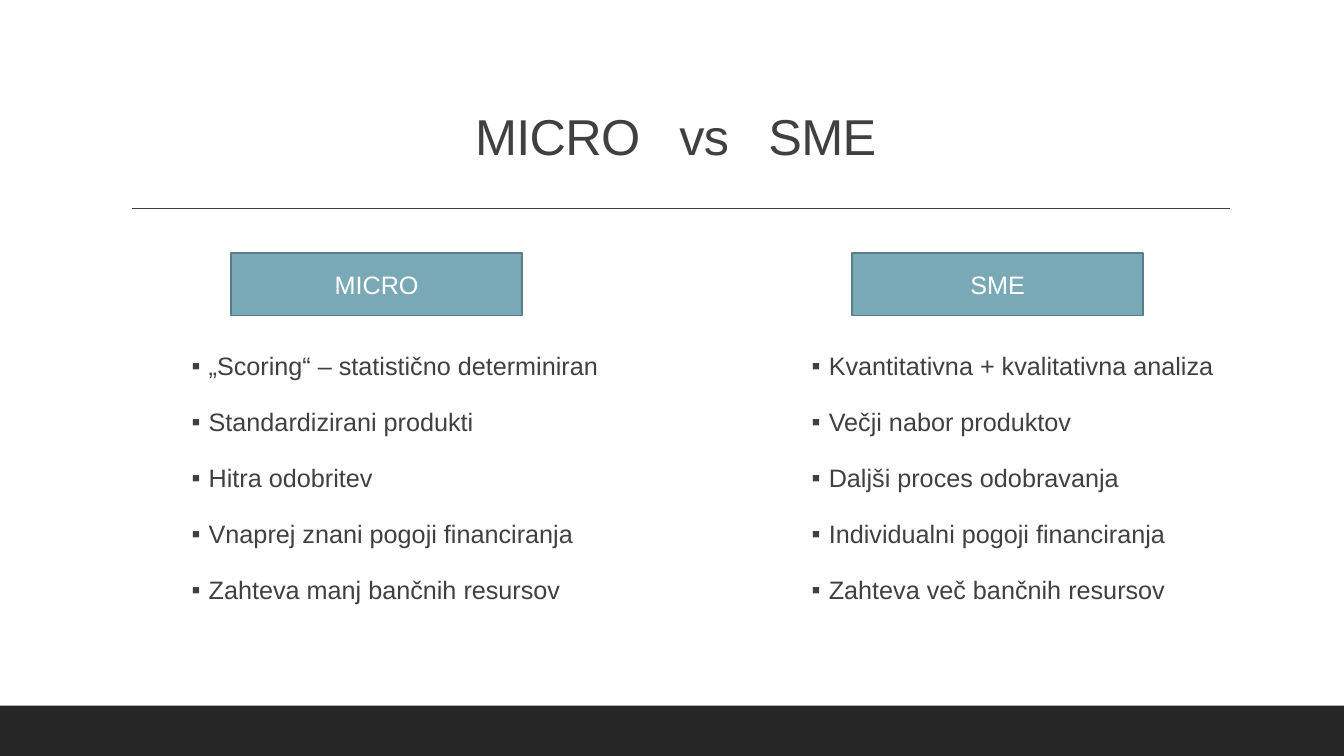
"""Builds a slide that compares micro and SME financing."""
import pptx
import pptx.dml.color
import pptx.enum.shapes
import pptx.enum.text
import pptx.util
from lxml import etree
from pptx.util import Inches, Pt

TITLE = "MICRO   vs   SME"
SEGMENTS = [
    {"name": "MICRO", "label_left": 2.29, "list_left": 1.9, "list_width": 4.76,
     "traits": ["„Scoring“ – statistično determiniran",
                "Standardizirani produkti",
                "Hitra odobritev",
                "Vnaprej znani pogoji financiranja",
                "Zahteva manj bančnih resursov"]},
    {"name": "SME", "label_left": 8.45, "list_left": 8.05, "list_width": 4.15,
     "traits": ["Kvantitativna + kvalitativna analiza",
                "Večji nabor produktov",
                "Daljši proces odobravanja",
                "Individualni pogoji financiranja",
                "Zahteva več bančnih resursov"]},
]
WIDTH, HEIGHT = 13.33, 7.5
FOOTER_HEIGHT = 0.5
RULE_LEFT, RULE_RIGHT, RULE_TOP = 1.31, 12.2, 2.07
LABEL_TOP, LABEL_WIDTH, LABEL_HEIGHT = 2.51, 2.89, 0.62
LIST_TOP, LIST_HEIGHT = 3.37, 3.05
BULLET_INDENT = 0.17
DARK, FOOTER, TEAL, TEAL_EDGE, WHITE = "404040", "262626", "79A9B7", "5A7D87", "FFFFFF"


def rgb(value):
    return pptx.dml.color.RGBColor.from_string(value)


def style(paragraph, size, color):
    paragraph.font.name = "Arial"
    paragraph.font.size = Pt(size)
    paragraph.font.color.rgb = rgb(color)


def add_box(slide, left, top, width, height, fill):
    box = slide.shapes.add_shape(
        pptx.enum.shapes.MSO_SHAPE.RECTANGLE,
        Inches(left), Inches(top), Inches(width), Inches(height))
    box.shadow.inherit = False
    box.fill.solid()
    box.fill.fore_color.rgb = rgb(fill)
    box.line.fill.background()
    return box


def add_rule(slide):
    rule = slide.shapes.add_connector(
        pptx.enum.shapes.MSO_CONNECTOR.STRAIGHT,
        Inches(RULE_LEFT), Inches(RULE_TOP), Inches(RULE_RIGHT), Inches(RULE_TOP))
    rule.line.color.rgb = rgb(DARK)
    rule.line.width = Pt(1)
    etree.SubElement(rule._element.spPr, pptx.oxml.ns.qn("a:effectLst"))


def set_title(slide):
    title = slide.shapes.title
    title.left, title.top = Inches(1.2), Inches(0.31)
    title.width, title.height = Inches(11), Inches(1.39)
    title.text_frame.text = TITLE
    title.text_frame.vertical_anchor = pptx.enum.text.MSO_ANCHOR.BOTTOM
    heading = title.text_frame.paragraphs[0]
    heading.alignment = pptx.enum.text.PP_ALIGN.CENTER
    heading.line_spacing = 0.9
    style(heading, 36, DARK)
    heading.runs[0]._r.get_or_add_rPr().set("spc", "-50")


def add_label(slide, segment):
    label = add_box(slide, segment["label_left"], LABEL_TOP, LABEL_WIDTH, LABEL_HEIGHT, TEAL)
    label.line.color.rgb = rgb(TEAL_EDGE)
    label.line.width = Pt(1.25)
    label.text_frame.text = segment["name"]
    label.text_frame.vertical_anchor = pptx.enum.text.MSO_ANCHOR.MIDDLE
    caption = label.text_frame.paragraphs[0]
    caption.alignment = pptx.enum.text.PP_ALIGN.CENTER
    style(caption, 18, WHITE)


def add_traits(slide, segment):
    frame = slide.shapes.add_textbox(
        Inches(segment["list_left"]), Inches(LIST_TOP),
        Inches(segment["list_width"]), Inches(LIST_HEIGHT)).text_frame
    frame.word_wrap = True
    frame.margin_left = frame.margin_right = 0
    frame.text = "\n".join(segment["traits"])
    for trait in frame.paragraphs:
        style(trait, 18, DARK)
        trait.line_spacing = 1.2
        trait.space_before, trait.space_after = Pt(12), Pt(2)
        properties = trait._p.get_or_add_pPr()
        properties.set("marL", str(Inches(BULLET_INDENT)))
        properties.set("indent", str(-Inches(BULLET_INDENT)))
        bullet_font = etree.Element(pptx.oxml.ns.qn("a:buFont"), typeface="Arial")
        bullet = etree.Element(pptx.oxml.ns.qn("a:buChar"), char="▪")
        defaults = properties.find(pptx.oxml.ns.qn("a:defRPr"))
        defaults.addprevious(bullet_font)
        defaults.addprevious(bullet)


def main():
    deck = pptx.Presentation()
    deck.slide_width, deck.slide_height = Inches(WIDTH), Inches(HEIGHT)
    slide = deck.slides.add_slide(deck.slide_layouts[5])
    add_box(slide, 0, HEIGHT - FOOTER_HEIGHT, WIDTH, FOOTER_HEIGHT, FOOTER)
    add_rule(slide)
    set_title(slide)
    for segment in SEGMENTS:
        add_traits(slide, segment)
        add_label(slide, segment)
    deck.save("out.pptx")


if __name__ == "__main__":
    main()
